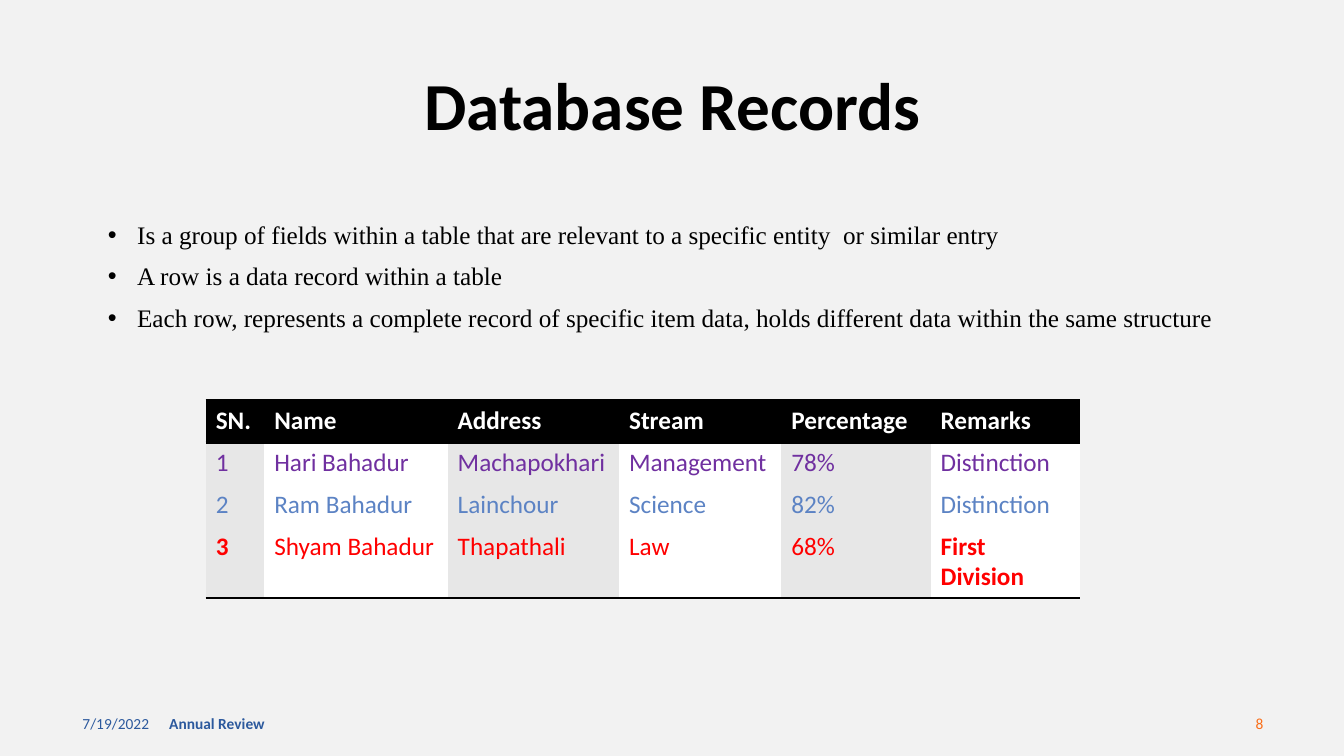
from lxml import etree
from pptx import Presentation
from pptx.dml.color import RGBColor
from pptx.enum.text import MSO_ANCHOR, MSO_AUTO_SIZE, PP_ALIGN
from pptx.oxml.ns import qn
from pptx.util import Inches, Pt

LEFT, CENTER, RIGHT, JUSTIFY = PP_ALIGN.LEFT, PP_ALIGN.CENTER, PP_ALIGN.RIGHT, PP_ALIGN.JUSTIFY
TOP, MIDDLE = MSO_ANCHOR.TOP, MSO_ANCHOR.MIDDLE
NO_AUTOFIT = MSO_AUTO_SIZE.NONE
PLAIN_TABLE_STYLE = "{2D5ABB26-0587-4C30-8999-92F81FD0307C}"

# Content
TITLE = "Database Records"
POINTS = [
    "Is a group of fields within a table that are relevant to a specific entity  or similar entry",
    "A row is a data record within a table",
    "Each row, represents a complete record of specific item data, "
    "holds different data within the same structure",
]
RECORDS = [
    ("SN.", "Name", "Address", "Stream", "Percentage", "Remarks"),
    ("1", "Hari Bahadur", "Machapokhari", "Management", "78%", "Distinction"),
    ("2", "Ram Bahadur", "Lainchour", "Science", "82%", "Distinction"),
    ("3", "Shyam Bahadur", "Thapathali", "Law", "68%", "First Division"),
]
ROW_COLORS = ["FFFFFF", "7030A0", "5C83C4", "FF0000"]
BOLD_CELLS = {(0, column) for column in range(6)} | {(3, 0), (3, 5)}
COLUMN_WIDTHS = [0.58, 1.82, 1.7, 1.61, 1.48, 1.48]
ROW_HEIGHTS = [0.42, 0.42, 0.41, 0.71]
COLUMN_FILLS = ["E7E7E7", "FFFFFF"]
FOOTERS = [  # text, left, width, colour, bold, alignment
    ("7/19/2022", 0.72, 3, "2C599D", False, LEFT),
    ("Annual Review", 1.58, 4.5, "2C599D", True, LEFT),
    ("8", 9.63, 3, "FA6F1A", False, RIGHT),
]


def rgb(color):
    return RGBColor.from_string(color)


def write(frame, lines, size=18, font="Calibri", color="000000", bold=False,
          align=LEFT, anchor=TOP, line_spacing=None, space_before=0):
    frame.word_wrap = True
    frame.vertical_anchor = anchor
    for index, line in enumerate(lines):
        paragraph = frame.add_paragraph() if index else frame.paragraphs[0]
        paragraph.alignment = align
        paragraph.line_spacing = line_spacing
        paragraph.space_before = Pt(space_before)
        run = paragraph.add_run()
        run.text = line
        run.font.size = Pt(size)
        run.font.name = font
        run.font.bold = bold
        run.font.color.rgb = rgb(color)


def place(shape, left, top, width, height):
    shape.left, shape.top = Inches(left), Inches(top)
    shape.width, shape.height = Inches(width), Inches(height)


def add_border(cell, side):
    properties = cell._tc.get_or_add_tcPr()
    line = etree.SubElement(properties, qn(f"a:ln{side}"), w=str(Pt(2)))
    fill = etree.SubElement(line, qn("a:solidFill"))
    etree.SubElement(fill, qn("a:srgbClr"), val="000000")


presentation = Presentation()
presentation.slide_width = Inches(13.33)
presentation.slide_height = Inches(7.5)
slide = presentation.slides.add_slide(presentation.slide_layouts[1])
slide.background.fill.solid()
slide.background.fill.fore_color.rgb = rgb("F2F2F2")

# Title and bullet list
title, body = slide.placeholders
place(title, 0.92, 0.69, 11.5, 0.77)
place(body, 0.97, 2.16, 11.5, 4.5)
write(title.text_frame, [TITLE], size=48, bold=True, align=CENTER,
      anchor=MIDDLE, line_spacing=0.9)
write(body.text_frame, POINTS, font="Times New Roman", align=JUSTIFY,
      line_spacing=0.9, space_before=10)
for placeholder in (title, body):
    placeholder.text_frame.auto_size = NO_AUTOFIT
for paragraph in body.text_frame.paragraphs:
    properties = paragraph._p.get_or_add_pPr()
    properties.set("marL", str(Inches(0.29)))
    properties.set("indent", str(-Inches(0.29)))
    etree.SubElement(properties, qn("a:buFont"), typeface="Arial")
    etree.SubElement(properties, qn("a:buChar"), char="•")

# Records table
table = slide.shapes.add_table(
    len(RECORDS), len(COLUMN_WIDTHS), Inches(2.04), Inches(3.97),
    Inches(sum(COLUMN_WIDTHS)), Inches(sum(ROW_HEIGHTS))).table
table._tbl.tblPr.find(qn("a:tableStyleId")).text = PLAIN_TABLE_STYLE
for column, width in zip(table.columns, COLUMN_WIDTHS):
    column.width = Inches(width)
for row, height in zip(table.rows, ROW_HEIGHTS):
    row.height = Inches(height)

last_row = len(RECORDS) - 1
for row_index, record in enumerate(RECORDS):
    for column_index, text in enumerate(record):
        cell = table.cell(row_index, column_index)
        write(cell.text_frame, [text], color=ROW_COLORS[row_index],
              bold=(row_index, column_index) in BOLD_CELLS)
        if row_index == 0:
            add_border(cell, "T")
        if row_index in (0, last_row):
            add_border(cell, "B")
        cell.fill.solid()
        cell.fill.fore_color.rgb = rgb(COLUMN_FILLS[column_index % 2] if row_index else "000000")

# Footer
for text, left, width, color, bold, align in FOOTERS:
    box = slide.shapes.add_textbox(Inches(left), Inches(6.98), Inches(width), Inches(0.4))
    write(box.text_frame, [text], size=11, color=color, bold=bold, align=align, anchor=MIDDLE)

presentation.save("out.pptx")
